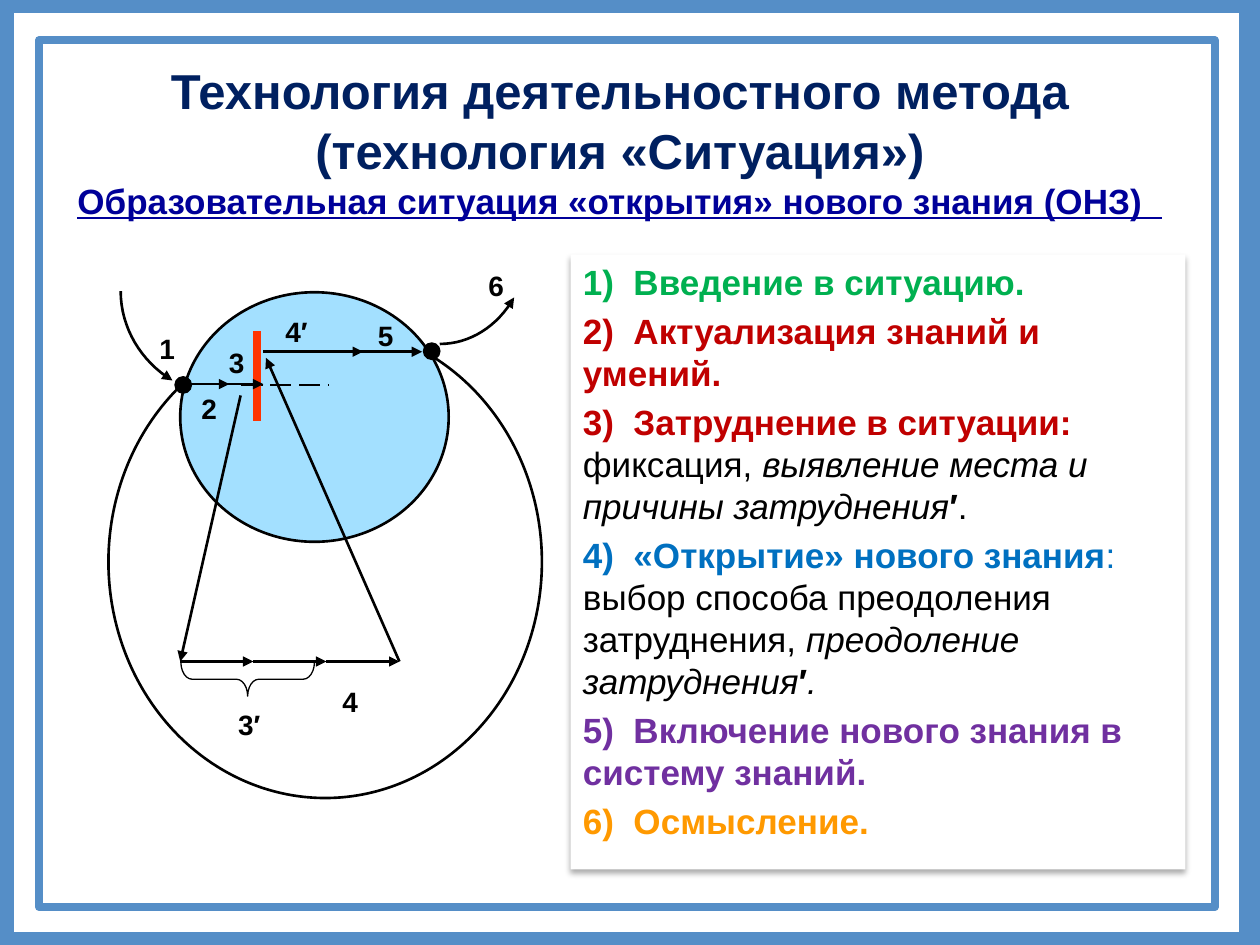
from lxml.etree import SubElement
from pptx import Presentation
from pptx.dml.color import RGBColor
from pptx.enum.dml import MSO_LINE
from pptx.enum.shapes import MSO_CONNECTOR, MSO_SHAPE
from pptx.enum.text import MSO_ANCHOR, MSO_AUTO_SIZE, PP_ALIGN
from pptx.oxml.ns import qn
from pptx.util import Pt

WHITE = RGBColor(0xFF, 0xFF, 0xFF)
BLACK = RGBColor(0, 0, 0)
NAVY = RGBColor(0x00, 0x20, 0x60)
INDIGO = RGBColor(0x00, 0x00, 0x99)
FRAME_BLUE = RGBColor(0x55, 0x8E, 0xC7)
LIGHT_BLUE = RGBColor(0xA3, 0xE0, 0xFF)
BARRIER_RED = RGBColor(0xFF, 0x33, 0x00)
GREEN = RGBColor(0x00, 0xB0, 0x50)
RED = RGBColor(0xC0, 0x00, 0x00)
BLUE = RGBColor(0x00, 0x70, 0xC0)
PURPLE = RGBColor(0x70, 0x30, 0xA0)
ORANGE = RGBColor(0xFF, 0x99, 0x00)

HEADING = [
    ("Технология деятельностного метода", 28, NAVY),
    ("(технология «Ситуация»)", 28, NAVY),
    ("Образовательная ситуация «открытия» нового знания (ОНЗ)  ", 20, INDIGO),
]

# Each run: text, colour, bold, italic
STEPS = [
    [("1)  Введение в ситуацию.", GREEN, True, False)],
    [("2)  Актуализация знаний и умений.", RED, True, False)],
    [("3)  Затруднение в ситуации: ", RED, True, False),
     ("фиксация, ", BLACK, False, False),
     ("выявление места и причины затруднения", BLACK, False, True),
     ("′", BLACK, True, False),
     (".", BLACK, False, False)],
    [("4)  «Открытие» нового знания", BLUE, True, False),
     (": ", BLUE, False, False),
     ("выбор способа преодоления затруднения, ", BLACK, False, False),
     ("преодоление затруднения", BLACK, False, True),
     ("′", BLACK, True, False),
     (".", BLACK, False, True)],
    [("5)  Включение нового знания в систему знаний.", PURPLE, True, False)],
    [("6)  Осмысление.", ORANGE, True, False)],
]

# Diagram parts, in points from the diagram's top left corner
LABELS = [("4′", 94, 26), ("6", 210, 0), ("4", 126.6, 237.4), ("5", 146.8, 28.6),
          ("1", 22, 36), ("2", 46, 70.3), ("3", 61.8, 43.7), ("3′", 67, 251)]
BASE_Y, BASE_LEFT, BASE_STEP = 228, 41, 41.75
BASE_RIGHT = BASE_LEFT + 3 * BASE_STEP
ARROWS = [(x, BASE_Y, x + BASE_STEP, BASE_Y)
          for x in (BASE_LEFT + i * BASE_STEP for i in range(3))]
ARROWS += [
    (88.5, 51, 145.4, 51), (129.5, 51, 179.2, 51),
    (46.7, 69.5, 69, 69.5), (58.2, 69.5, 88.5, 69.5),
    (75.5, 76, BASE_LEFT, BASE_Y), (BASE_RIGHT, BASE_Y, 90, 54.5),
]
CURVES = [
    [(7, 16.3), (7, 37.2), (18.6, 56.6), (36.6, 67.4)],
    [(189.3, 46.6), (206.6, 46.6), (222.4, 36.5), (231.8, 20)],
]


def add_arrowhead(line_owner):
    line_owner.line._get_or_add_ln().append(
        line_owner._element.makeelement(qn("a:tailEnd"), {"type": "triangle"}))


def add_outline(slide, kind, box, fill=None, line=BLACK, width=1.5):
    shape = slide.shapes.add_shape(kind, *map(Pt, box))
    shape.shadow.inherit = False
    if fill is None:
        shape.fill.background()
    else:
        shape.fill.solid()
        shape.fill.fore_color.rgb = fill
    shape.line.color.rgb = line
    shape.line.width = Pt(width)
    return shape


def add_line(slide, left, top, ends, color=BLACK, width=1.5):
    x1, y1, x2, y2 = ends
    line = slide.shapes.add_connector(
        MSO_CONNECTOR.STRAIGHT, Pt(left + x1), Pt(top + y1), Pt(left + x2), Pt(top + y2))
    line.line.color.rgb = color
    line.line.width = Pt(width)
    SubElement(line._element.spPr, qn("a:effectLst"))
    return line


def add_curved_arrow(slide, left, top, controls, steps=16):
    """Draw a cubic Bézier curve through short segments, with an arrowhead."""
    points = []
    for i in range(steps + 1):
        t = i / steps
        weights = ((1 - t) ** 3, 3 * t * (1 - t) ** 2, 3 * t ** 2 * (1 - t), t ** 3)
        x, y = (sum(w * c[axis] for w, c in zip(weights, controls)) for axis in (0, 1))
        points.append((Pt(left + x), Pt(top + y)))
    builder = slide.shapes.build_freeform(*points[0])
    builder.add_line_segments(points[1:], close=False)
    curve = builder.convert_to_shape()
    curve.shadow.inherit = False
    curve.fill.background()
    curve.line.color.rgb = BLACK
    curve.line.width = Pt(1.5)
    add_arrowhead(curve)


def add_heading(slide, left, top, width, height):
    title = slide.shapes.title
    title.left, title.top, title.width, title.height = map(Pt, (left, top, width, height))
    frame = title.text_frame
    frame.auto_size = MSO_AUTO_SIZE.NONE
    frame.vertical_anchor = MSO_ANCHOR.TOP
    frame.text = "\n".join(text for text, _, _ in HEADING)
    for paragraph, (_, size, color) in zip(frame.paragraphs, HEADING):
        paragraph.alignment = PP_ALIGN.CENTER
        font = paragraph.font
        font.name, font.size, font.bold = "Arial", Pt(size), True
        font.color.rgb = color
    frame.paragraphs[0].line_spacing = 0.96
    frame.paragraphs[-1].font.underline = True


def add_steps(slide, left, top, width, height):
    panel = add_outline(slide, MSO_SHAPE.RECTANGLE, (left, top, width, height), WHITE)
    panel.line.fill.background()
    shadow = SubElement(panel._element.spPr.find(qn("a:effectLst")), qn("a:outerShdw"),
                        blurRad=str(Pt(3.5)), dist=str(Pt(2.2)), dir="5400000", rotWithShape="0")
    shade = SubElement(shadow, qn("a:srgbClr"), val="000000")
    SubElement(shade, qn("a:alpha"), val="32000")
    frame = panel.text_frame
    frame.word_wrap = True
    frame.vertical_anchor = MSO_ANCHOR.TOP
    for i, runs in enumerate(STEPS):
        paragraph = frame.add_paragraph() if i else frame.paragraphs[0]
        paragraph.alignment = PP_ALIGN.LEFT
        paragraph.space_after = Pt(4)
        paragraph.font.name, paragraph.font.size = "Arial", Pt(20)
        for text, color, bold, italic in runs:
            run = paragraph.add_run()
            run.text = text
            run.font.bold, run.font.italic = bold, italic
            run.font.color.rgb = color


def add_diagram(slide, left, top):
    def placed(x, y, width, height):
        return left + x, top + y, width, height

    add_outline(slide, MSO_SHAPE.OVAL, placed(0, 36, 247.7, 270))
    add_outline(slide, MSO_SHAPE.OVAL, placed(41, 17, 153.4, 142.6), LIGHT_BLUE)
    for x, y in ((180, 46), (38, 65.3)):
        add_outline(slide, MSO_SHAPE.OVAL, placed(x, y, 9.4, 9.4), BLACK, width=0.75)
    brace = add_outline(slide, MSO_SHAPE.RIGHT_BRACE, placed(69.8, 200, 19.4, 76.3), width=0.75)
    brace.rotation = 90
    brace.adjustments[0] = 0.33

    dashes = add_line(slide, left, top, (76, 70, 126, 70))
    dashes.line.dash_style = MSO_LINE.LONG_DASH
    add_line(slide, left, top, (85, 39.4, 85, 90.5), BARRIER_RED, 4.5)
    for ends in ARROWS:
        add_arrowhead(add_line(slide, left, top, ends))
    for controls in CURVES:
        add_curved_arrow(slide, left, top, controls)

    for text, x, y in LABELS:
        label = slide.shapes.add_textbox(*map(Pt, placed(x, y, 36, 30)))
        label.text_frame.word_wrap = True
        paragraph = label.text_frame.paragraphs[0]
        paragraph.text = text
        font = paragraph.font
        font.name, font.size, font.bold = "Arial", Pt(16), True
        font.color.rgb = BLACK


def add_frame(slide):
    for box, width in (((0.7, 0, 715, 540), 15), ((22.3, 23, 671.8, 495.4), 4.5)):
        add_outline(slide, MSO_SHAPE.RECTANGLE, box, line=FRAME_BLUE, width=width)


def main():
    deck = Presentation()
    deck.slide_width, deck.slide_height = Pt(720), Pt(540)
    slide = deck.slides.add_slide(deck.slide_layouts[5])
    add_heading(slide, 36.7, 33, 635, 97.2)
    add_steps(slide, 326, 145.4, 351.4, 351.4)
    add_diagram(slide, 62, 150)
    add_frame(slide)
    deck.save("out.pptx")


if __name__ == "__main__":
    main()
